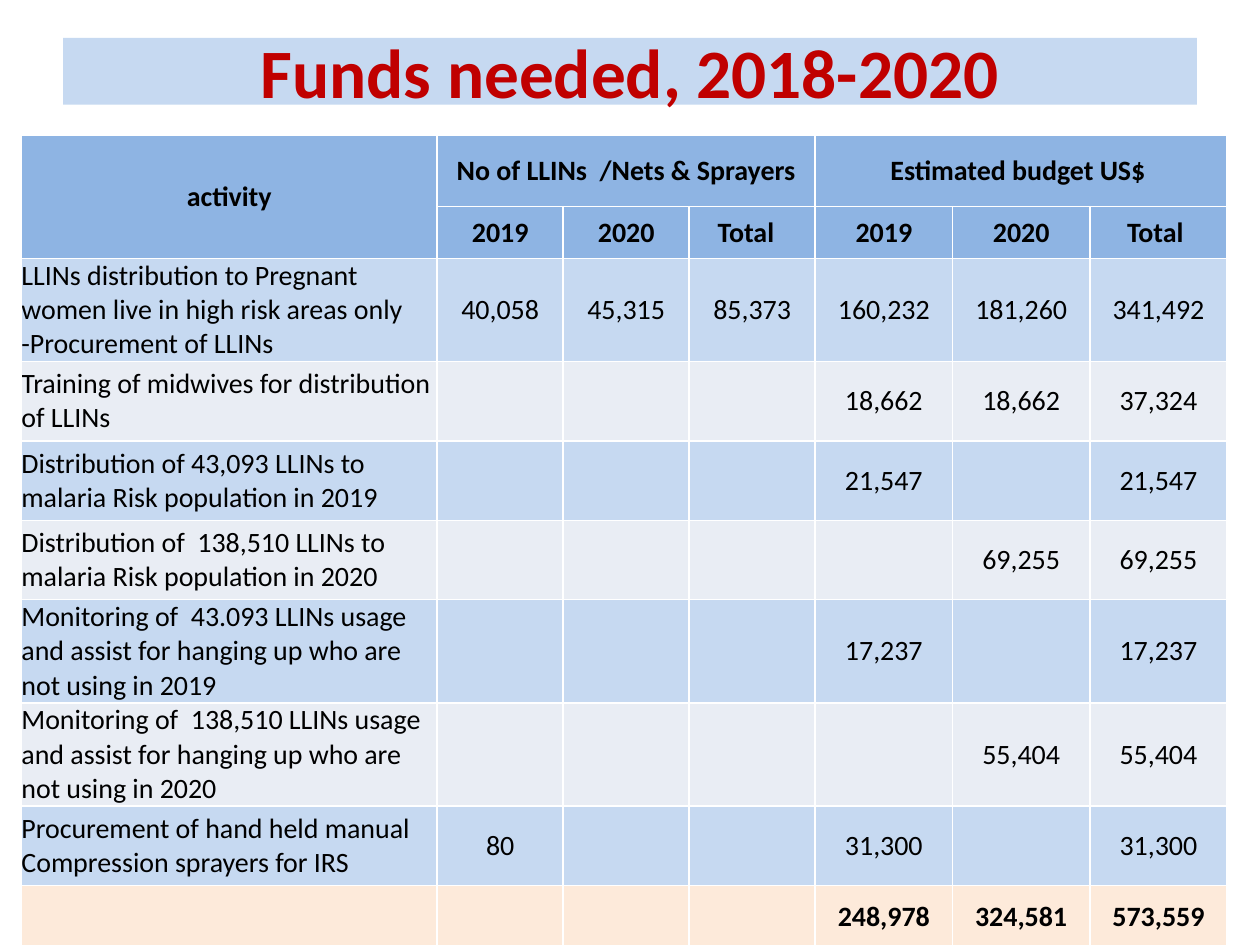
from dataclasses import dataclass

from lxml.etree import SubElement
from pptx import Presentation
from pptx.dml.color import RGBColor
from pptx.enum.text import MSO_ANCHOR as Anchor, PP_ALIGN as Align
from pptx.oxml.ns import qn
from pptx.util import Inches, Pt


@dataclass(frozen=True)
class Theme:
    """Colours and type sizes of the slide."""
    font: str = "Calibri"
    title_size: float = 39.6
    table_size: float = 16
    title_ink: str = "C00000"
    ink: str = "000000"
    border: str = "FFFFFF"
    header: str = "8EB4E3"
    band: str = "C6D9F1"
    alternate: str = "E9EDF4"
    total: str = "FDEADA"


class SlideBuilder:
    """Adds styled elements to the current slide."""

    def __init__(self, slide, theme):
        self.slide = slide
        self.theme = theme

    def style(self, frame, size, ink, bold, align):
        """Format every paragraph and run of a text frame."""
        for paragraph in frame.paragraphs:
            paragraph.alignment = align
            for run in paragraph.runs:
                run.font.name = self.theme.font
                run.font.size = Pt(size)
                run.font.bold = bold
                run.font.color.rgb = RGBColor.from_string(ink)

    def title(self, text, left, top, width, height):
        """Fill and place the title placeholder."""
        heading = self.slide.shapes.title
        heading.left, heading.top = Inches(left), Inches(top)
        heading.width, heading.height = Inches(width), Inches(height)
        heading.fill.solid()
        heading.fill.fore_color.rgb = RGBColor.from_string(self.theme.band)
        heading.text_frame.text = text
        heading.text_frame.vertical_anchor = Anchor.MIDDLE
        self.style(heading.text_frame, self.theme.title_size,
                   self.theme.title_ink, True, Align.CENTER)

    def border(self, cell):
        """Draw thin lines on all four sides of a cell."""
        properties = cell._tc.get_or_add_tcPr()
        for position, side in enumerate(("a:lnL", "a:lnR", "a:lnT", "a:lnB")):
            line = SubElement(properties, qn(side), w=str(Pt(1)))
            fill = SubElement(line, qn("a:solidFill"))
            SubElement(fill, qn("a:srgbClr"), val=self.theme.border)
            properties.insert(position, line)

    def cell(self, cell, text, fill, bold, align):
        """Write and format one table cell."""
        cell.margin_left = cell.margin_right = 0
        cell.margin_top = cell.margin_bottom = 0
        cell.vertical_anchor = Anchor.MIDDLE
        cell.fill.solid()
        cell.fill.fore_color.rgb = RGBColor.from_string(fill)
        self.border(cell)
        cell.text_frame.text = text
        self.style(cell.text_frame, self.theme.table_size, self.theme.ink,
                   bold, align)

    def table(self, rows, fills, bold_rows, merges, left, top, widths, heights):
        """Add a table with one fill per row and merged header cells."""
        grid = self.slide.shapes.add_table(
            len(rows), len(widths), Inches(left), Inches(top),
            Inches(sum(widths)), Inches(sum(heights))).table
        for column, width in zip(grid.columns, widths):
            column.width = Inches(width)
        for r, (texts, fill, height) in enumerate(zip(rows, fills, heights)):
            grid.rows[r].height = Inches(height)
            bold = r in bold_rows
            for c, text in enumerate(texts):
                align = Align.CENTER if bold or c else Align.LEFT
                self.cell(grid.cell(r, c), text, fill, bold, align)
        for first, last in merges:
            grid.cell(*first).merge(grid.cell(*last))


HEADERS = [
    ["activity", "No of LLINs  /Nets & Sprayers", "", "",
     "Estimated budget US$ ", "", ""],
    ["", "2019", "2020", "Total  ", "2019", "2020", "Total "],
]
BUDGET = [
    ("LLINs distribution to Pregnant women live in high risk areas only "
     "-Procurement of LLINs", 40058, 45315, 85373, 160232, 181260, 341492),
    ("Training of midwives for distribution of LLINs",
     None, None, None, 18662, 18662, 37324),
    ("Distribution of 43,093 LLINs to malaria Risk population in 2019",
     None, None, None, 21547, None, 21547),
    ("Distribution of  138,510 LLINs to malaria Risk population in 2020",
     None, None, None, None, 69255, 69255),
    ("Monitoring of  43.093 LLINs usage and assist for hanging up who are "
     "not using in 2019", None, None, None, 17237, None, 17237),
    ("Monitoring of  138,510 LLINs usage and assist for hanging up who are "
     "not using in 2020", None, None, None, None, 55404, 55404),
    ("Procurement of hand held manual Compression sprayers for IRS",
     80, None, None, 31300, None, 31300),
    ("", None, None, None, 248978, 324581, 573559),
]


def main():
    """Build the funding slide and save it."""
    theme = Theme()
    deck = Presentation()
    deck.slide_width, deck.slide_height = Inches(10), Inches(7.5)
    builder = SlideBuilder(deck.slides.add_slide(deck.slide_layouts[5]), theme)
    builder.title("Funds needed, 2018-2020", 0.5, 0.3, 9, 0.53)

    rows = HEADERS + [
        [activity] + ["" if n is None else f" {n:,} " for n in amounts]
        for activity, *amounts in BUDGET]
    bands = [theme.alternate if i % 2 else theme.band
             for i in range(len(BUDGET) - 1)]
    builder.table(
        rows,
        fills=[theme.header] * len(HEADERS) + bands + [theme.total],
        bold_rows={0, 1, len(rows) - 1},
        merges=[((0, 0), (1, 0)), ((0, 1), (0, 3)), ((0, 4), (0, 6))],
        left=0.17, top=1.07,
        widths=[3.3] + [1] * 3 + [1.09] * 3,
        heights=[0.57, 0.41, 0.82, 0.63, 0.63, 0.63, 0.82, 0.82, 0.63, 0.49])
    deck.save("out.pptx")


if __name__ == "__main__":
    main()
